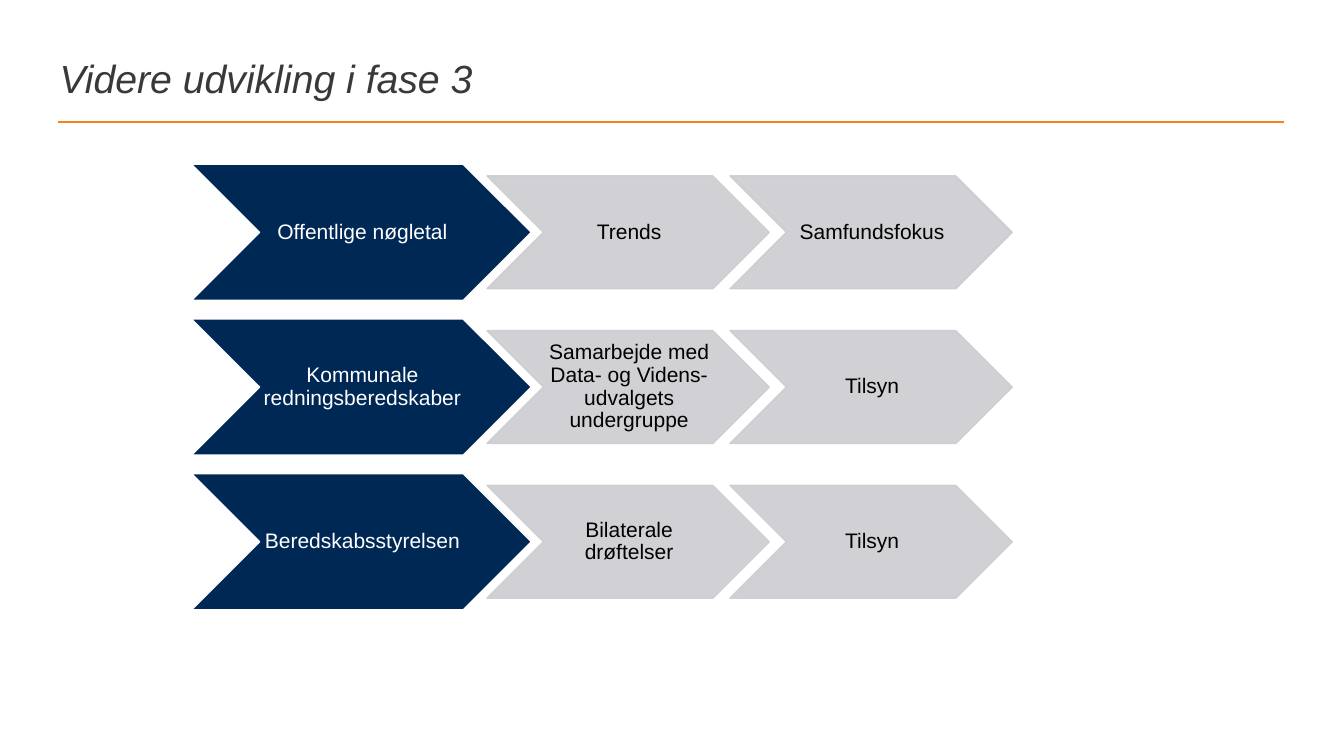
from dataclasses import dataclass

from lxml.etree import SubElement
from pptx import Presentation
from pptx.dml.color import RGBColor
from pptx.dml.fill import FillFormat
from pptx.enum.shapes import MSO_CONNECTOR as Link, MSO_SHAPE as Shape
from pptx.enum.text import MSO_ANCHOR as Anchor, PP_ALIGN as Align
from pptx.oxml.ns import qn
from pptx.slide import Slide
from pptx.util import Inches, Pt

NAVY = RGBColor(0x00, 0x28, 0x55)
GREY = RGBColor(0xCC, 0xCD, 0xD1)
ORANGE = RGBColor(0xF5, 0x82, 0x1E)
DARK = RGBColor(0x3B, 0x38, 0x38)
WHITE = RGBColor(0xFF, 0xFF, 0xFF)
BLACK = RGBColor(0x00, 0x00, 0x00)

FONT = "Arial"
MID = 2.305  # centre height of the first row
STEP = 1.535  # distance between rows


@dataclass(frozen=True)
class Style:
    width: float
    height: float
    fill: RGBColor
    line: RGBColor
    text: RGBColor
    alpha: int


LEAD = Style(3.37, 1.35, NAVY, WHITE, WHITE, 100)
NEXT = Style(2.8, 1.12, GREY, GREY, BLACK, 90)

COLS = [(1.9, LEAD), (4.83, NEXT), (7.24, NEXT)]
ROWS = [
    ("Offentlige nøgletal", "Trends", "Samfundsfokus"),
    ("Kommunale redningsberedskaber",
     "Samarbejde med Data- og Videns- udvalgets undergruppe", "Tilsyn"),
    ("Beredskabsstyrelsen", "Bilaterale drøftelser", "Tilsyn"),
]


def paint(fill: FillFormat, color: RGBColor, alpha: int) -> None:
    """Apply a solid colour with an opacity in percent."""
    fill.solid()
    fill.fore_color.rgb = color
    if alpha < 100:
        tone = fill._xPr.find(qn("a:solidFill"))[0]
        SubElement(tone, qn("a:alpha"), val=str(alpha * 1000))


def add_title(slide: Slide, text: str) -> None:
    title = slide.shapes.title
    title.left, title.top = Inches(0.49), Inches(0.47)
    title.width, title.height = Inches(12.26), Inches(0.61)
    frame = title.text_frame
    frame.text = text
    frame.vertical_anchor = Anchor.MIDDLE
    par = frame.paragraphs[0]
    par.alignment = Align.LEFT
    font = par.font
    font.name, font.size, font.italic = FONT, Pt(28), True
    font.color.rgb = DARK


def add_rule(slide: Slide) -> None:
    y = Inches(1.21)
    rule = slide.shapes.add_connector(
        Link.STRAIGHT, Inches(0.58), y, Inches(12.74), y)
    rule.line.color.rgb = ORANGE
    rule.line.width = Pt(2)
    SubElement(rule._element.spPr, qn("a:effectLst"))


def add_step(slide: Slide, left: float, mid: float, style: Style,
             text: str) -> None:
    """Draw a chevron centred on the height mid."""
    step = slide.shapes.add_shape(
        Shape.CHEVRON, Inches(left), Inches(mid - style.height / 2),
        Inches(style.width), Inches(style.height))
    step.shadow.inherit = False
    paint(step.fill, style.fill, style.alpha)
    paint(step.line.fill, style.line, style.alpha)
    step.line.width = Pt(1)

    frame = step.text_frame
    frame.word_wrap = True
    frame.vertical_anchor = Anchor.MIDDLE
    frame.margin_left, frame.margin_right = Inches(0.02), 0
    frame.margin_top = frame.margin_bottom = Inches(0.01)
    frame.text = text
    par = frame.paragraphs[0]
    par.alignment = Align.CENTER
    par.line_spacing = 0.9
    par.font.name, par.font.size = FONT, Pt(15)
    par.font.color.rgb = style.text


def main() -> None:
    deck = Presentation()
    deck.slide_width, deck.slide_height = Inches(13.33), Inches(7.5)
    slide = deck.slides.add_slide(deck.slide_layouts.get_by_name("Title Only"))
    add_rule(slide)
    add_title(slide, "Videre udvikling i fase 3")
    for row, texts in enumerate(ROWS):
        for (left, style), text in zip(COLS, texts):
            add_step(slide, left, MID + row * STEP, style, text)
    deck.save("out.pptx")


if __name__ == "__main__":
    main()
